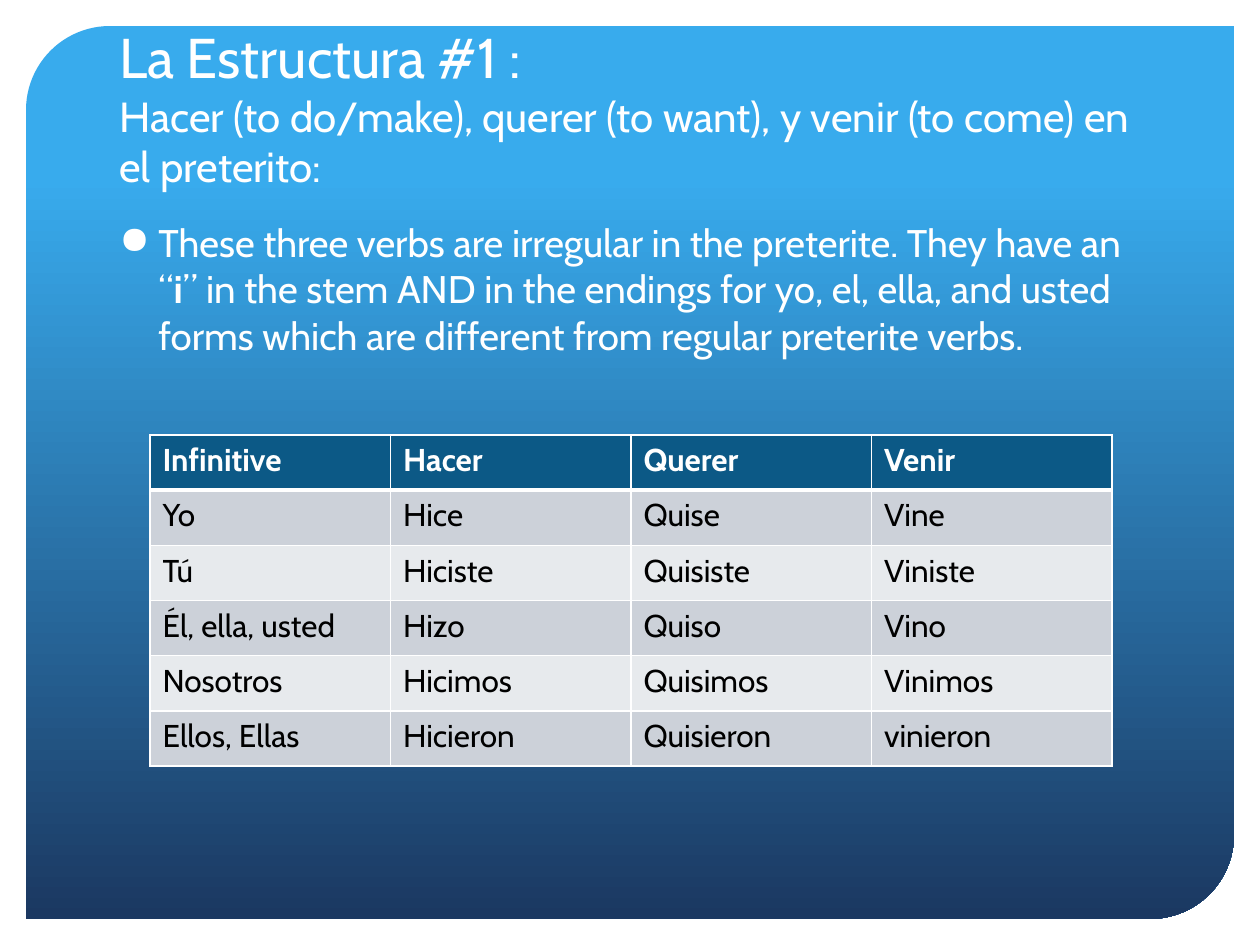
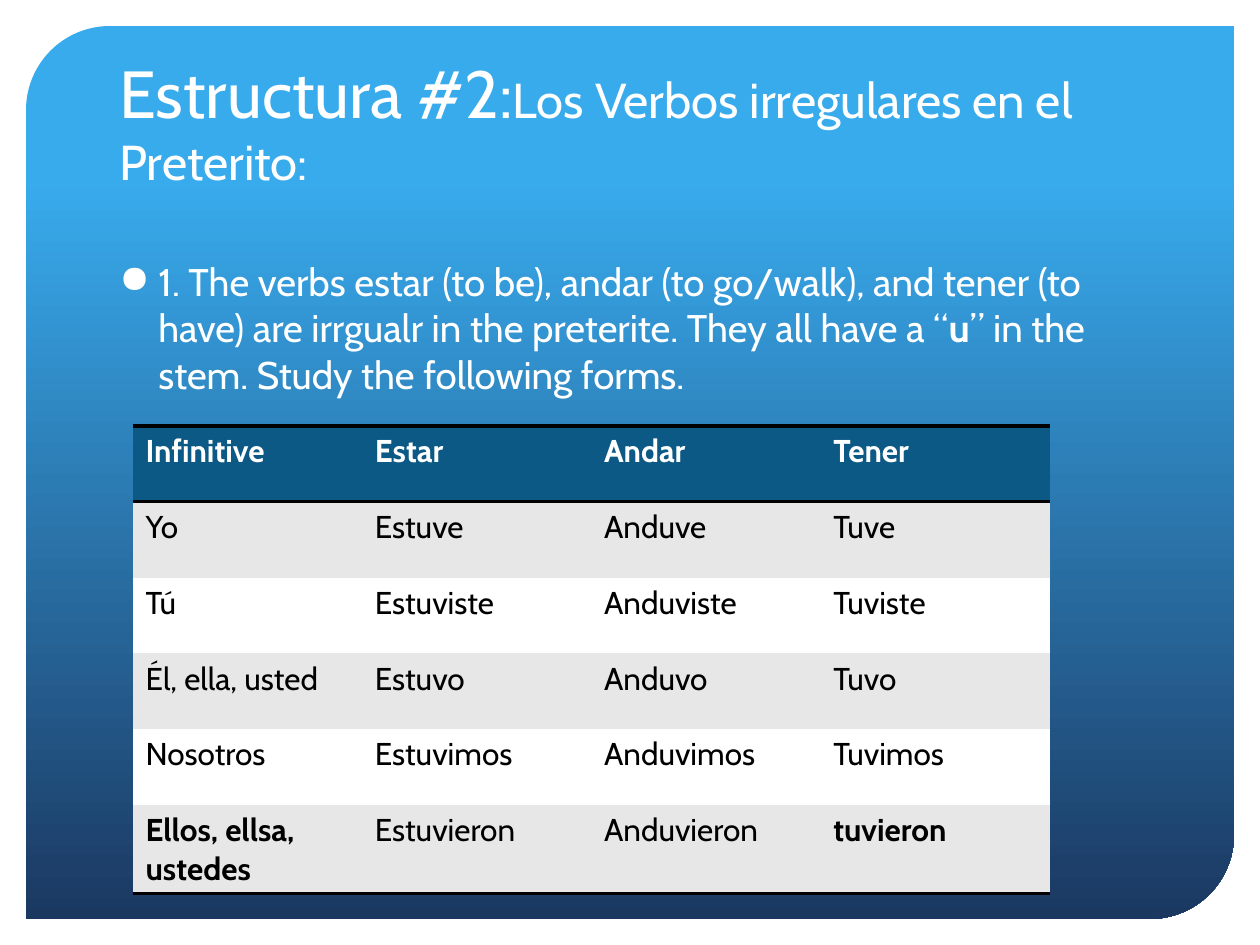
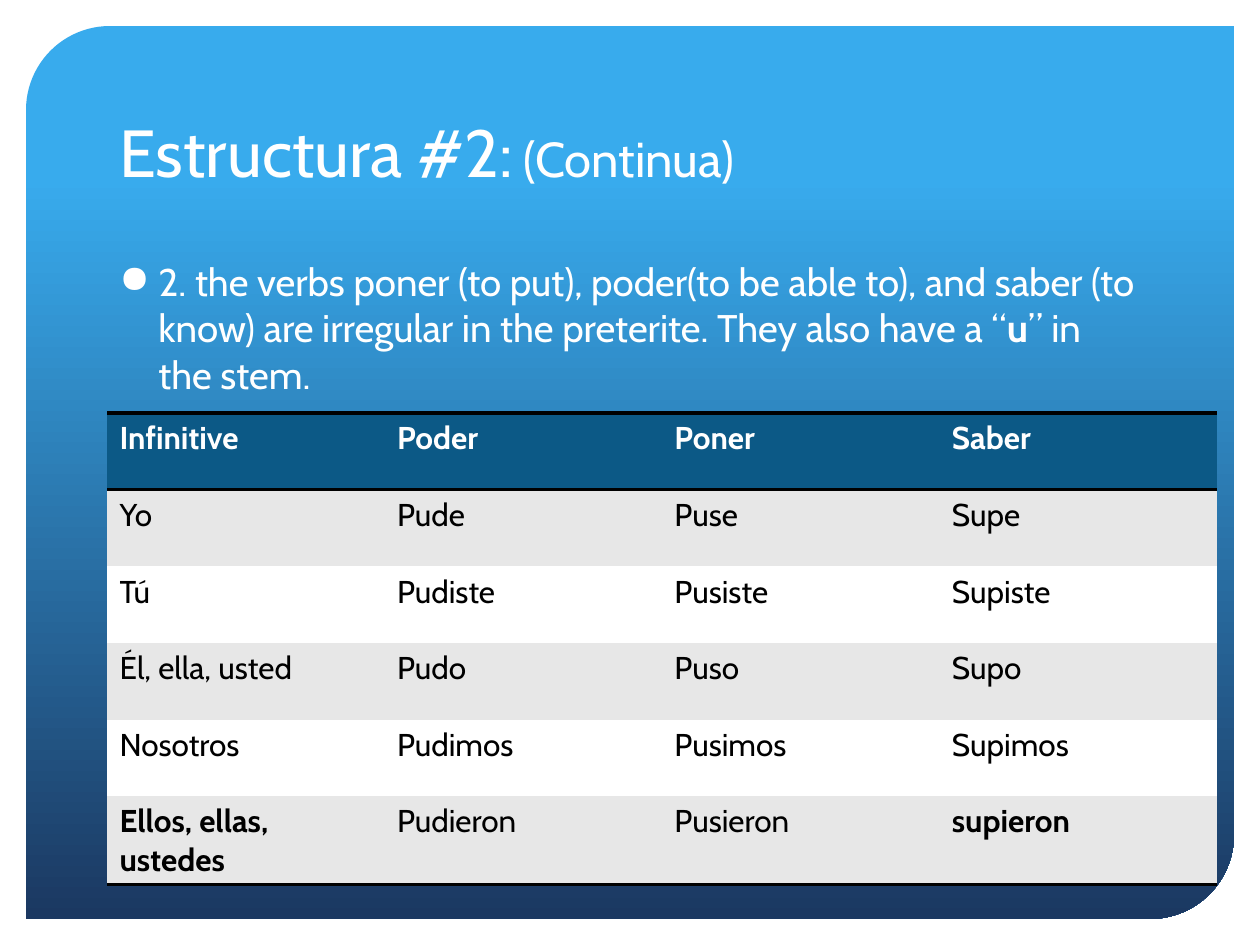
from dataclasses import dataclass

from lxml import etree
from pptx import Presentation
from pptx.dml.color import RGBColor
from pptx.enum.shapes import MSO_SHAPE
from pptx.enum.text import MSO_ANCHOR
from pptx.oxml.ns import qn
from pptx.util import Emu, Pt

ROUND_DIAGONAL = MSO_SHAPE.ROUND_2_DIAG_RECTANGLE
ANCHOR_TOP = MSO_ANCHOR.TOP
ANCHOR_BOTTOM = MSO_ANCHOR.BOTTOM

EMU_PER_PX = 914400 // 126
SLIDE_WIDTH, SLIDE_HEIGHT = 1260, 945
TEXT_LEFT, TEXT_WIDTH = 107, 1045
BULLET_INDENT = 39

FONT = "Cabin"
WHITE = "FFFFFF"
BLACK = "000000"
SKY = "38ABED"
NAVY = "1B3861"
HEADER_BLUE = "0C5986"

BODY_SIZE = 22
TABLE_SIZE = 18


@dataclass
class TableStyle:
    """Band fills, border colour, and widths of the rules above given rows."""
    bands: tuple
    border_color: str
    inner_width: int
    rule_widths: dict

    def rule_width(self, row):
        return self.rule_widths.get(row, self.inner_width)


GRID_STYLE = TableStyle(("CCD1D9", "E7EAED"), WHITE, 1, {1: 3})
RULED_STYLE = TableStyle(("E7E7E7", WHITE), BLACK, 0, {0: 2, 1: 2, 6: 2})


def px(length):
    return Emu(length * EMU_PER_PX)


def color(hex_string):
    return RGBColor.from_string(hex_string)


def set_font(font, size, hex_color=WHITE, bold=False):
    font.name = FONT
    font.size = Pt(size)
    font.color.rgb = color(hex_color)
    font.bold = bold


def add_panel(slide):
    panel = slide.shapes.add_shape(ROUND_DIAGONAL, px(26), px(26), px(1208), px(893))
    panel.adjustments[0] = 0.094
    panel.adjustments[1] = 0
    panel.shadow.inherit = False
    panel.line.fill.background()
    panel.fill.gradient()
    panel.fill.gradient_angle = 270
    stops = ((0.17, SKY), (1, NAVY))
    for stop, (position, hex_color) in zip(panel.fill.gradient_stops, stops):
        stop.position = position
        stop.color.rgb = color(hex_color)


def add_text_box(slide, top, height, anchor):
    """Return the single paragraph of a new text box."""
    box = slide.shapes.add_textbox(px(TEXT_LEFT), px(top), px(TEXT_WIDTH), px(height))
    box.text_frame.word_wrap = True
    box.text_frame.vertical_anchor = anchor
    return box.text_frame.paragraphs[0]


def add_title(slide, lead, lead_size, rest, rest_size, break_after_lead=False):
    paragraph = add_text_box(slide, 53, 144, ANCHOR_BOTTOM)
    lead_run = paragraph.add_run()
    lead_run.text = lead
    set_font(lead_run.font, lead_size)
    if break_after_lead:
        paragraph.add_line_break()
    rest_run = paragraph.add_run()
    rest_run.text = rest
    set_font(rest_run.font, rest_size)


def add_bullet_text(slide, top, before, stem_vowel, after):
    """Add a bulleted explanation with the stem vowel in bold."""
    paragraph = add_text_box(slide, top, 580, ANCHOR_TOP)
    properties = paragraph._p.get_or_add_pPr()
    properties.set("marL", str(px(BULLET_INDENT)))
    properties.set("indent", str(-px(BULLET_INDENT)))
    etree.SubElement(properties, qn("a:buChar")).set("char", "●")
    set_font(paragraph.font, BODY_SIZE)
    for text in (before, stem_vowel, after):
        run = paragraph.add_run()
        run.text = text
        run.font.bold = text == stem_vowel


def set_border(cell, side, width, hex_color):
    line = etree.SubElement(cell._tc.get_or_add_tcPr(), qn(f"a:ln{side}"))
    line.set("w", str(Pt(width)))
    if width:
        fill = etree.SubElement(line, qn("a:solidFill"))
        etree.SubElement(fill, qn("a:srgbClr")).set("val", hex_color)
    else:
        etree.SubElement(line, qn("a:noFill"))


def format_cell(cell, row, style, bold):
    widths = {
        "L": style.inner_width,
        "R": style.inner_width,
        "T": style.rule_width(row),
        "B": style.rule_width(row + 1),
    }
    for side, width in widths.items():
        set_border(cell, side, width, style.border_color)
    is_header = row == 0
    cell.fill.solid()
    cell.fill.fore_color.rgb = color(HEADER_BLUE if is_header else style.bands[(row - 1) % 2])
    set_font(cell.text_frame.paragraphs[0].font, TABLE_SIZE,
             WHITE if is_header else BLACK, is_header or bold)


def add_verb_table(slide, left, top, width, height, rows, style, bold_texts=()):
    frame = slide.shapes.add_table(len(rows), len(rows[0]),
                                   px(left), px(top), px(width), px(height))
    table = frame.table
    table.first_row = False
    table.horz_banding = False
    for row, texts in enumerate(rows):
        for column, text in enumerate(texts):
            cell = table.cell(row, column)
            cell.text = text
            format_cell(cell, row, style, text in bold_texts)


def add_slide(presentation):
    slide = presentation.slides.add_slide(presentation.slide_layouts[6])
    add_panel(slide)
    return slide


def add_hacer_slide(presentation):
    slide = add_slide(presentation)
    add_title(slide, "La Estructura #1 :", 32,
              "Hacer (to do/make), querer (to want), y venir (to come) en el preterito:",
              24, break_after_lead=True)
    add_bullet_text(
        slide, 213,
        "These three verbs are irregular in the preterite. They have an “", "i",
        "” in the stem AND in the endings for yo, el, ella, and usted forms "
        "which are different from regular preterite verbs.")
    rows = [
        ("Infinitive", "Hacer", "Querer", "Venir"),
        ("Yo", "Hice", "Quise", "Vine"),
        ("Tú", "Hiciste", "Quisiste", "Viniste"),
        ("Él, ella, usted", "Hizo", "Quiso", "Vino"),
        ("Nosotros", "Hicimos", "Quisimos", "Vinimos"),
        ("Ellos, Ellas", "Hicieron", "Quisieron", "vinieron"),
    ]
    add_verb_table(slide, 150, 435, 962, 331, rows, GRID_STYLE)


def add_estar_slide(presentation):
    slide = add_slide(presentation)
    add_title(slide, "Estructura #2:", 38, "Los Verbos irregulares en el Preterito:", 28)
    add_bullet_text(
        slide, 252,
        "1. The verbs estar (to be), andar (to go/walk), and tener (to have) "
        "are irrgualr in the preterite. They all have a “", "u",
        "” in the stem. Study the following forms.")
    rows = [
        ("Infinitive", "Estar", "Andar", "Tener"),
        ("Yo", "Estuve", "Anduve", "Tuve"),
        ("Tú", "Estuviste", "Anduviste", "Tuviste"),
        ("Él, ella, usted", "Estuvo", "Anduvo", "Tuvo"),
        ("Nosotros", "Estuvimos", "Anduvimos", "Tuvimos"),
        ("Ellos, ellsa, ustedes", "Estuvieron", "Anduvieron", "tuvieron"),
    ]
    add_verb_table(slide, 133, 426, 917, 455, rows, RULED_STYLE,
                   ("Ellos, ellsa, ustedes", "tuvieron"))


def add_poder_slide(presentation):
    slide = add_slide(presentation)
    add_title(slide, "Estructura #2:", 38, " (Continua)", 28)
    add_bullet_text(
        slide, 252,
        "2. the verbs poner (to put), poder(to be able to), and saber (to know) "
        "are irregular in the preterite. They also have a “", "u",
        "” in the stem.")
    rows = [
        ("Infinitive", "Poder", "Poner", "Saber"),
        ("Yo", "Pude", "Puse", "Supe"),
        ("Tú", "Pudiste", "Pusiste", "Supiste"),
        ("Él, ella, usted", "Pudo", "Puso", "Supo"),
        ("Nosotros", "Pudimos", "Pusimos", "Supimos"),
        ("Ellos, ellas, ustedes", "Pudieron", "Pusieron", "supieron"),
    ]
    add_verb_table(slide, 107, 413, 1110, 460, rows, RULED_STYLE,
                   ("Ellos, ellas, ustedes", "supieron"))


def main():
    presentation = Presentation()
    presentation.slide_width = px(SLIDE_WIDTH)
    presentation.slide_height = px(SLIDE_HEIGHT)
    add_hacer_slide(presentation)
    add_estar_slide(presentation)
    add_poder_slide(presentation)
    presentation.save("out.pptx")


if __name__ == "__main__":
    main()
